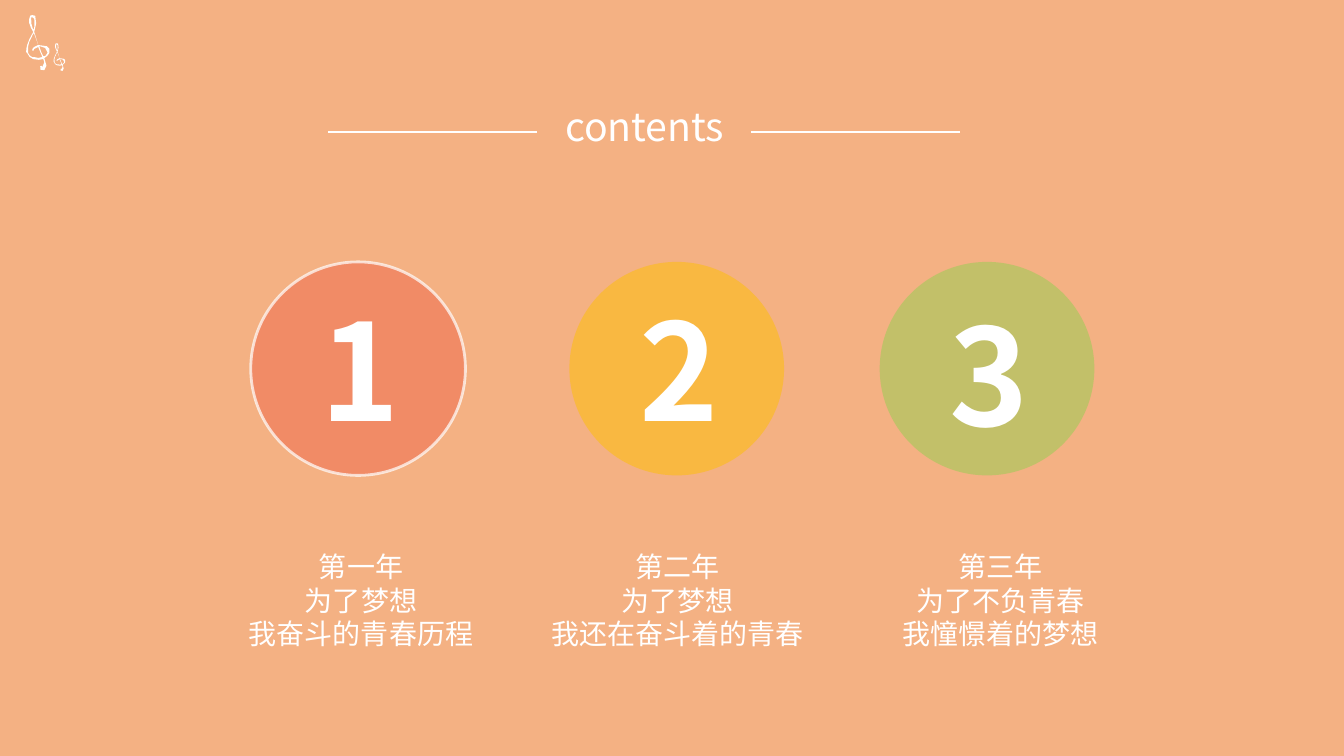
from dataclasses import dataclass

from lxml.etree import SubElement
from pptx import Presentation
from pptx.dml.color import RGBColor
from pptx.enum.shapes import MSO_CONNECTOR, MSO_SHAPE
from pptx.enum.text import MSO_ANCHOR, MSO_AUTO_SIZE, PP_ALIGN
from pptx.oxml.ns import qn
from pptx.util import Cm, Pt


@dataclass(frozen=True)
class Theme:
    background: str = "F4B183"
    white: str = "FFFFFF"
    red: str = "F0664B"
    yellow: str = "FFC000"
    green: str = "92D050"
    heading_font: str = "Noto Sans CJK SC"
    body_font: str = "Calibri"
    title_size: int = 28
    number_size: int = 96
    caption_size: int = 20


THEME = Theme()

CHAPTERS = [
    ("1", THEME.red, 6.32, 7.11, 5.94, 6.32, "第一年\n为了梦想\n我奋斗的青春历程"),
    ("2", THEME.yellow, 14.35, 7.11, 13.54, 7.06, "第二年\n为了梦想\n我还在奋斗着的青春"),
    ("3", THEME.green, 22.17, 7.24, 22.3, 5.82, "第三年\n为了不负青春\n我憧憬着的梦想"),
]

CLEF_CONTOURS = [
    [(170, 440), (180, 472), (160, 520), (154, 506), (140, 510), (141, 545),
     (180, 550), (202, 505), (180, 430), (209, 409), (230, 380), (230, 337),
     (205, 312), (120, 300), (90, 200), (80, 170), (100, 86), (90, 10),
     (60, 3), (40, 10), (31, 41), (30, 80), (46, 125), (70, 170), (60, 190),
     (31, 245), (10, 300), (2, 336), (0, 370), (10, 380), (35, 419),
     (70, 440), (125, 447)],
    [(210, 370), (210, 380), (190, 410), (170, 410), (160, 390), (150, 370),
     (130, 310), (189, 329)],
    [(50, 30), (55, 23), (70, 30), (80, 40), (83, 80), (80, 130), (70, 150),
     (52, 89)],
    [(60, 420), (36, 403), (20, 380), (20, 370), (19, 320), (30, 270),
     (70, 190), (75, 182), (80, 190), (110, 270), (120, 300), (80, 320),
     (65, 335), (60, 350), (70, 360), (80, 340), (120, 320), (140, 370),
     (150, 390), (160, 420), (120, 428), (80, 420)],
]


def rgb(color):
    return RGBColor.from_string(color)


def set_alpha(fill, percent):
    color = fill._xPr.find(qn("a:solidFill"))[0]
    SubElement(color, qn("a:alpha"), val=str(percent * 1000))


def write_text(shape, text, font, size, align=PP_ALIGN.LEFT, bold=False):
    tf = shape.text_frame
    tf.text = text
    tf.word_wrap = True
    tf.auto_size = MSO_AUTO_SIZE.NONE
    tf.vertical_anchor = MSO_ANCHOR.TOP
    for p in tf.paragraphs:
        p.alignment = align
        p.font.name = font
        p.font.size = Pt(size)
        p.font.bold = bold
        p.font.color.rgb = rgb(THEME.white)


def add_text(s, left, top, width, height, *text_args, **text_options):
    box = s.shapes.add_textbox(Cm(left), Cm(top), Cm(width), Cm(height))
    write_text(box, *text_args, **text_options)


def add_clef(s, left, top, size):
    first, *holes = CLEF_CONTOURS
    builder = s.shapes.build_freeform(*first[0], scale=Cm(2.54) * size / 1000)
    builder.add_line_segments(first[1:], close=True)
    for hole in holes:
        builder.move_to(*hole[0])
        builder.add_line_segments(hole[1:], close=True)
    sp = builder.convert_to_shape()
    sp.left, sp.top = Cm(left), Cm(top)
    sp.shadow.inherit = False
    sp.fill.solid()
    sp.fill.fore_color.rgb = rgb(THEME.white)
    sp.line.fill.background()


def add_circle(s, left, top, color):
    sp = s.shapes.add_shape(MSO_SHAPE.OVAL, Cm(left), Cm(top), Cm(5.41), Cm(5.38))
    sp.shadow.inherit = False
    sp.fill.solid()
    sp.fill.fore_color.rgb = rgb(color)
    set_alpha(sp.fill, 50)
    sp.line.fill.background()
    return sp


def outline_circle(sp):
    sp.line.color.rgb = rgb(THEME.white)
    sp.line.width = Pt(2)
    set_alpha(sp.line.fill, 70)


def add_rule(s, left, top, width):
    line = s.shapes.add_connector(
        MSO_CONNECTOR.STRAIGHT, Cm(left), Cm(top), Cm(left + width), Cm(top))
    line.line.color.rgb = rgb(THEME.white)
    line.line.width = Pt(1.5)
    SubElement(line._element.spPr, qn("a:effectLst"))


def add_title(s, text):
    title = s.shapes.title
    title.left, title.top = Cm(13.54), Cm(2.44)
    title.width, title.height = Cm(5.41), Cm(1.45)
    write_text(title, text, THEME.heading_font, THEME.title_size, PP_ALIGN.CENTER)


def add_chapter(s, number, color, left, number_top, caption_left, caption_width, caption):
    circle = add_circle(s, left, 6.6, color)
    add_text(s, left + 1.52, number_top, 3.89, 4.37, number,
             THEME.heading_font, THEME.number_size, bold=True)
    add_text(s, caption_left, 13.72, caption_width, 2.82, caption,
             THEME.body_font, THEME.caption_size, PP_ALIGN.CENTER)
    return circle


def main():
    prs = Presentation()
    prs.slide_width, prs.slide_height = Cm(33.87), Cm(19.05)
    s = prs.slides.add_slide(prs.slide_layouts[5])
    s.background.fill.solid()
    s.background.fill.fore_color.rgb = rgb(THEME.background)
    add_clef(s, 0.66, 0.38, 1)
    add_clef(s, 1.35, 1.09, 0.5)
    add_title(s, "contents")
    for left in (8.26, 18.92):
        add_rule(s, left, 3.33, 5.28)
    circles = [add_chapter(s, *chapter) for chapter in CHAPTERS]
    outline_circle(circles[0])
    prs.save("out.pptx")


if __name__ == "__main__":
    main()
